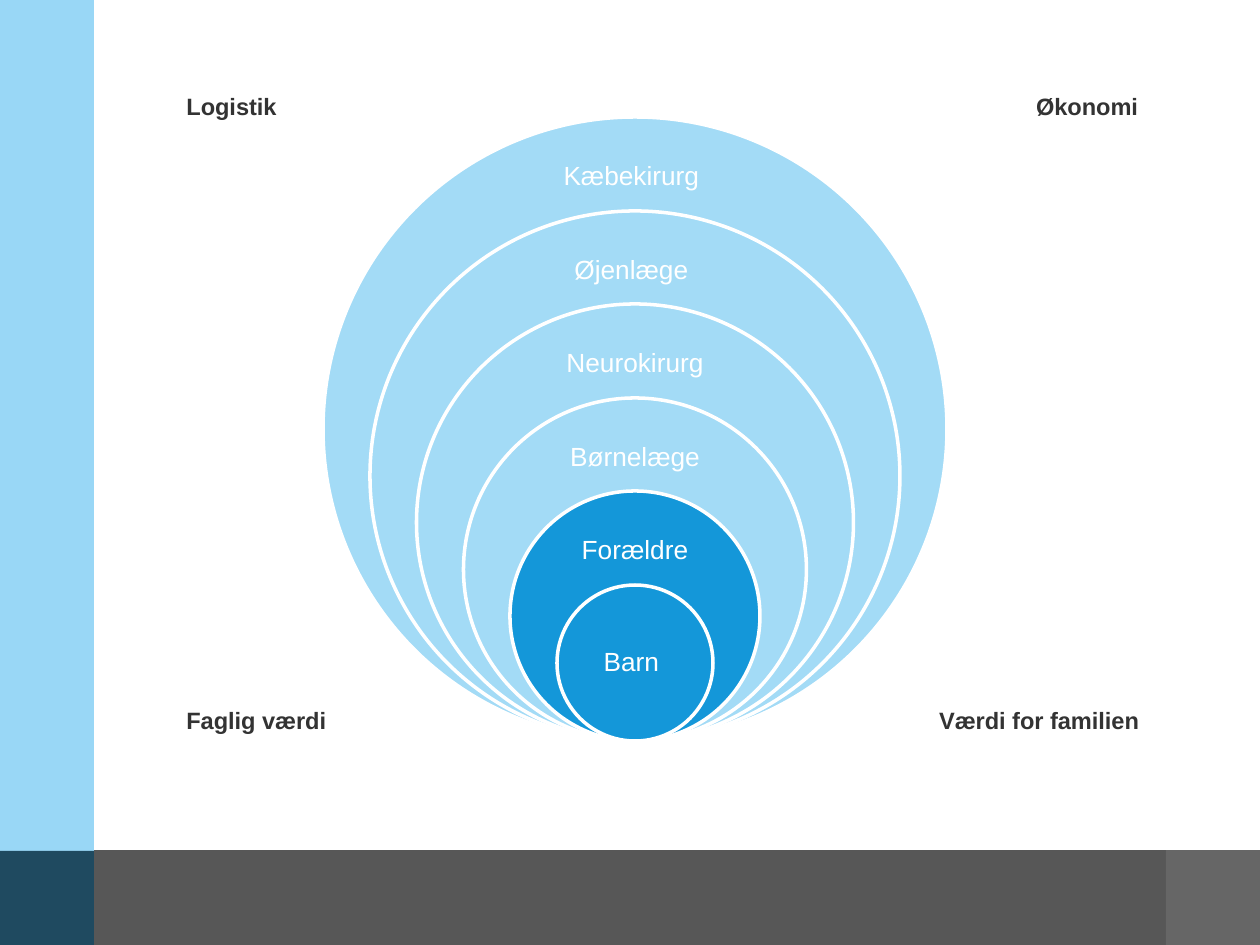
import pptx
import pptx.util
import pptx.dml.color
import pptx.enum.shapes
import pptx.enum.text

PX = 914400 / 126
ALIGN = pptx.enum.text.PP_ALIGN
ANCHOR = pptx.enum.text.MSO_ANCHOR
SHAPE = pptx.enum.shapes.MSO_SHAPE

WHITE, GREY = "FFFFFF", "333333"
LIGHT_BLUE, BLUE = "A3DBF6", "1497D9"

BANDS = [
    (84, 850, 1176, 95, "575757"),
    (1166, 850, 94, 95, "666666"),
    (0, 0, 94, 851, "99D7F6"),
    (0, 851, 94, 94, "1F4A60"),
]
# Name, fill, label width, label height, label offset from the circle's top
CIRCLES = [
    ("Kæbekirurg ", LIGHT_BLUE, 234, 61, 30),
    ("Øjenlæge ", LIGHT_BLUE, 228, 61, 30),
    ("Neurokirurg", LIGHT_BLUE, 226, 61, 30),
    ("Børnelæge", LIGHT_BLUE, 185, 61, 30),
    ("Forældre", BLUE, 163, 61, 30),
    ("Barn ", BLUE, 110, 78, 39),
]
CENTRE_X, CIRCLE_BOTTOM = 635, 741
OUTER_DIAMETER, INNER_DIAMETER = 624, 156

CORNERS = [
    ("Logistik", 174, 86, 117, ALIGN.LEFT),
    ("Økonomi ", 1022, 86, 135, ALIGN.RIGHT),
    ("Faglig værdi", 174, 700, 174, ALIGN.LEFT),
    ("Værdi for familien ", 924, 700, 234, ALIGN.RIGHT),
]


def px(n):
    return pptx.util.Emu(round(n * PX))


def rgb(value):
    return pptx.dml.color.RGBColor.from_string(value)


def add_shape(slide, kind, x, y, w, h, fill, line=None):
    sp = slide.shapes.add_shape(kind, px(x), px(y), px(w), px(h))
    sp.shadow.inherit = False
    sp.fill.solid()
    sp.fill.fore_color.rgb = rgb(fill)
    if line:
        sp.line.color.rgb = rgb(line)
        sp.line.width = pptx.util.Pt(2)
    else:
        sp.line.fill.background()


def add_text(slide, text, x, y, w, h, *, size, color, bold=False, align=ALIGN.LEFT,
             anchor=ANCHOR.TOP, wrap=True, inset=None, spacing=None):
    tf = slide.shapes.add_textbox(px(x), px(y), px(w), px(h)).text_frame
    tf.word_wrap = wrap
    tf.vertical_anchor = anchor
    if inset is not None:
        tf.margin_left = tf.margin_right = tf.margin_top = tf.margin_bottom = px(inset)
    p = tf.paragraphs[0]
    p.alignment = align
    p.line_spacing = spacing
    r = p.add_run()
    r.text = text
    r.font.name = "Arial"
    r.font.size = pptx.util.Pt(size)
    r.font.bold = bold
    r.font.color.rgb = rgb(color)


def add_nested_circles(slide):
    """Circles shrink by equal steps and share their lowest point."""
    step = (OUTER_DIAMETER - INNER_DIAMETER) / (len(CIRCLES) - 1)
    for i, (name, fill, w, h, offset) in enumerate(CIRCLES):
        d = round(OUTER_DIAMETER - i * step)
        top = CIRCLE_BOTTOM - d
        add_shape(slide, SHAPE.OVAL, CENTRE_X - d / 2, top, d, d, fill, line=WHITE)
        add_text(slide, name, CENTRE_X - w / 2, top + offset, w, h, size=15, color=WHITE,
                 align=ALIGN.CENTER, anchor=ANCHOR.MIDDLE, inset=15, spacing=0.9)


def main():
    prs = pptx.Presentation()
    prs.slide_width, prs.slide_height = px(1260), px(945)
    slide = prs.slides.add_slide(prs.slide_layouts[6])
    for x, y, w, h, fill in BANDS:
        add_shape(slide, SHAPE.RECTANGLE, x, y, w, h, fill)
    add_nested_circles(slide)
    for text, x, y, w, align in CORNERS:
        add_text(slide, text, x, y, w, 42, size=13.5, color=GREY, bold=True,
                 align=align, wrap=False)
    prs.save("out.pptx")


if __name__ == "__main__":
    main()
